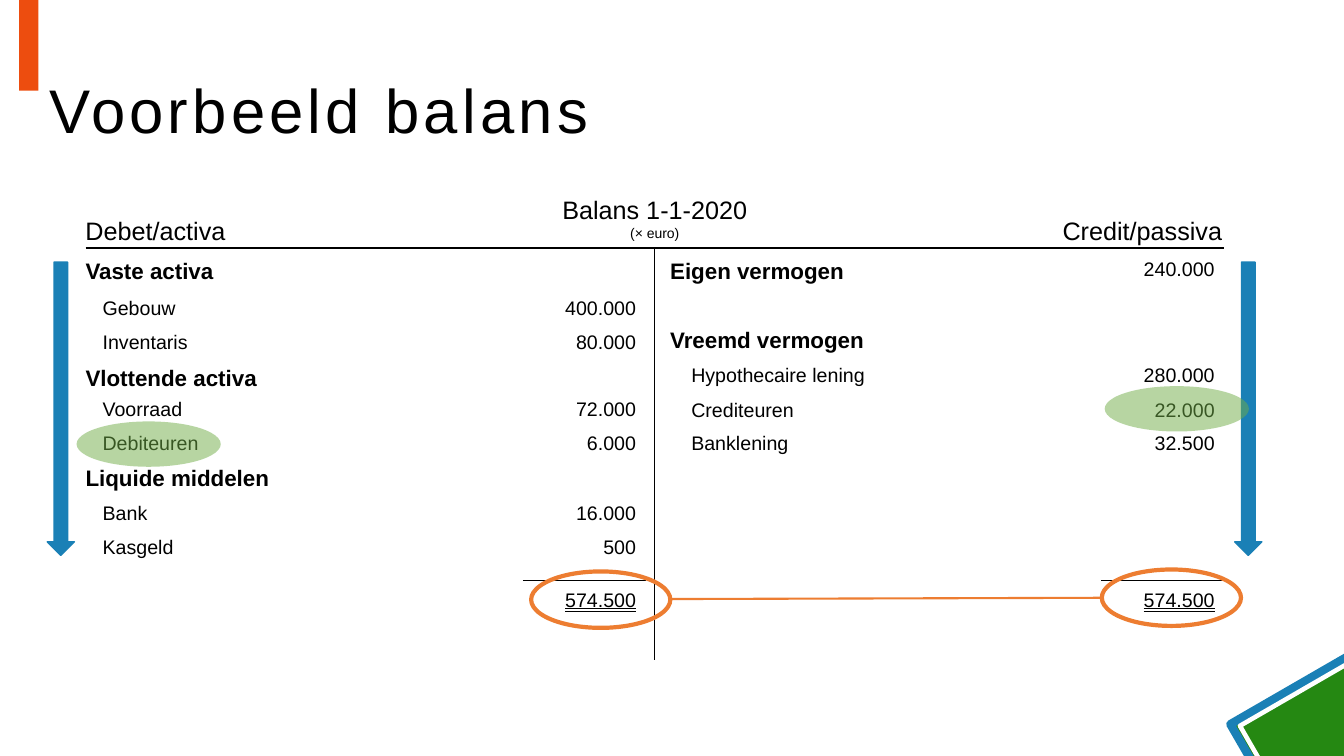
from lxml import etree
from pptx import Presentation
from pptx.dml.color import RGBColor
from pptx.enum.shapes import MSO_CONNECTOR, MSO_SHAPE
from pptx.enum.text import MSO_ANCHOR, MSO_AUTO_SIZE, MSO_UNDERLINE, PP_ALIGN
from pptx.oxml.ns import qn
from pptx.util import Pt

LEFT, CENTER, RIGHT = PP_ALIGN.LEFT, PP_ALIGN.CENTER, PP_ALIGN.RIGHT
RECT, OVAL, DOWN_ARROW = MSO_SHAPE.RECTANGLE, MSO_SHAPE.OVAL, MSO_SHAPE.DOWN_ARROW
STRAIGHT = MSO_CONNECTOR.STRAIGHT
MIDDLE = MSO_ANCHOR.MIDDLE
GROW = MSO_AUTO_SIZE.SHAPE_TO_FIT_TEXT
DOUBLE = MSO_UNDERLINE.DOUBLE_LINE

FONT = "Arial"
BLACK, WHITE, BLUE = "000000", "FFFFFF", "1A80B6"
RED, GREEN, ORANGE, LIGHT_GREEN = "ED4D0F", "258812", "ED7D31", "70AD47"
ITEM_SIZE, HEADING_SIZE, CAPTION_SIZE = 14, 16, 18
TOTAL_Y = 236.2

# Label, offset from the top of the account, box width, amount, is heading
ASSETS = [
    ("Vaste activa", 0, 107.3, "", True),
    ("Gebouw", 28, 67, "400.000", False),
    ("Inventaris", 52, 75.6, "80.000", False),
    ("Vlottende activa", 76.3, 138.2, "", True),
    ("Voorraad", 100, 72, "72.000", False),
    ("Debiteuren", 124, 83.5, "6.000", False),
    ("Liquide middelen", 148.3, 147.6, "", True),
    ("Bank", 174.2, 46.8, "16.000", False),
    ("Kasgeld", 198.7, 65.5, "500", False),
]
LIABILITIES = [
    ("Eigen vermogen", 0, 140.4, "240.000", True),
    ("Vreemd vermogen", 49.7, 154.8, "", True),
    ("Hypothecaire lening", 75.6, 139, "280.000", False),
    ("Crediteuren", 100.5, 87.8, "22.000", False),
    ("Banklening", 124.3, 84.2, "32.500", False),
]


def rgb(code):
    return RGBColor.from_string(code)


def add_text(s, x, y, w, h, text, size, align=LEFT, bold=False):
    tb = s.shapes.add_textbox(Pt(x), Pt(y), Pt(w), Pt(h))
    tf = tb.text_frame
    tf.word_wrap = False
    tf.auto_size = GROW
    tf.text = text
    p = tf.paragraphs[0]
    p.alignment = align
    for r in p.runs:
        r.font.name, r.font.size, r.font.bold = FONT, Pt(size), bold
        r.font.color.rgb = rgb(BLACK)
    return tf


def add_shape(s, kind, x, y, w, h, fill=None, line=None, weight=1, alpha=None):
    sp = s.shapes.add_shape(kind, Pt(x), Pt(y), Pt(w), Pt(h))
    sp.shadow.inherit = False
    if fill:
        sp.fill.solid()
        sp.fill.fore_color.rgb = rgb(fill)
    else:
        sp.fill.background()
    if line:
        sp.line.color.rgb = rgb(line)
        sp.line.width = Pt(weight)
    else:
        sp.line.fill.background()
    if alpha:
        color = sp.fill._xPr.find(qn("a:solidFill"))[0]
        etree.SubElement(color, qn("a:alpha")).set("val", str(alpha * 1000))
    return sp


def add_line(s, x1, y1, x2, y2, color=BLACK, weight=1):
    line = s.shapes.add_connector(STRAIGHT, Pt(x1), Pt(y1), Pt(x2), Pt(y2))
    line.line.color.rgb = rgb(color)
    line.line.width = Pt(weight)
    etree.SubElement(line._element.spPr, qn("a:effectLst"))


def add_decoration(s):
    add_shape(s, RECT, 13.7, -18, 13.7, 82.8, RED)
    add_shape(s, RECT, 898.6, 483.1, 108, 108, GREEN, BLUE, 6).rotation = 60
    add_shape(s, RECT, 903.6, 487.4, 98, 98, None, WHITE, 3.25).rotation = 60


def add_title(s, x, y, w, h):
    tf = add_text(s, x, y, w, h, "Voorbeeld balans", 44)
    tf.auto_size = MSO_AUTO_SIZE.NONE
    tf.word_wrap = True
    tf.vertical_anchor = MIDDLE
    p = tf.paragraphs[0]
    p.line_spacing = 0.9
    p.runs[0].font._element.set("spc", "300")


def add_header(s, x, y, w):
    """Draw the T of the balance sheet, with its captions above the bar."""
    middle = x + w / 2
    add_line(s, x, y, x + w, y)
    add_line(s, middle, y + 1, middle, y + 294)
    tf = add_text(s, middle - 73.8, y - 41.8, 147.6, 41,
                  "Balans 1-1-2020\v(× euro)", CAPTION_SIZE, CENTER)
    tf.paragraphs[0].runs[1].font.size = Pt(10)
    add_text(s, x - 7.2, y - 26.6, 115.2, 29, "Debet/activa", CAPTION_SIZE)
    add_text(s, x + w - 122.2, y - 26.6, 134.6, 29, "Credit/passiva", CAPTION_SIZE)


def add_amount(s, right, y, amount):
    dots = amount.count(".")
    w = 14.4 + 7.79 * (len(amount) - dots) + 3.89 * dots
    return add_text(s, right - w, y, w, 24.2, amount, ITEM_SIZE, RIGHT)


def add_account(s, x, y, w, indent, rows):
    """Draw one side of the balance, down to its total."""
    right = x + w
    for label, dy, label_w, amount, heading in rows:
        size, h = (HEADING_SIZE, 26.7) if heading else (ITEM_SIZE, 24.2)
        label_x = x if heading else x + indent
        add_text(s, label_x, y + dy, label_w, h, label, size, bold=heading)
        if amount:
            add_amount(s, right, y + dy, amount)
    add_line(s, right - 88, y + TOTAL_Y - 1.5, right, y + TOTAL_Y - 1.5)
    total = add_amount(s, right, y + TOTAL_Y, "574.500")
    total.paragraphs[0].runs[0].font.underline = DOUBLE


def add_marks(s, y):
    """Draw the side arrows, the linked totals and the highlighted entries."""
    for x in (33.8, 882):
        add_shape(s, DOWN_ARROW, x, y + 7.2, 19.4, 209.5, BLUE, BLUE)
    for x, dy in ((379.4, 228.2), (787, 226.8)):
        add_shape(s, OVAL, x, y + dy, 99.4, 40.3, None, ORANGE, 3)
    add_line(s, 478.8, y + 247.9, 787, y + 247, ORANGE, 1.5)
    for x, dy in ((54.7, 121), (789.1, 95.8)):
        add_shape(s, OVAL, x, y + dy, 103, 32.4, LIGHT_GREEN, alpha=50)


def main():
    prs = Presentation()
    prs.slide_width, prs.slide_height = Pt(960), Pt(540)
    s = prs.slides.add_slide(prs.slide_layouts[6])
    add_decoration(s)
    add_title(s, 28.1, 28.8, 905.8, 104.4)
    add_header(s, 61.2, 177.1, 812.9)
    add_account(s, 54, 180, 407.5, 12.2, ASSETS)
    add_account(s, 471.6, 180, 403.2, 15.1, LIABILITIES)
    add_marks(s, 180)
    prs.save("out.pptx")


if __name__ == "__main__":
    main()
